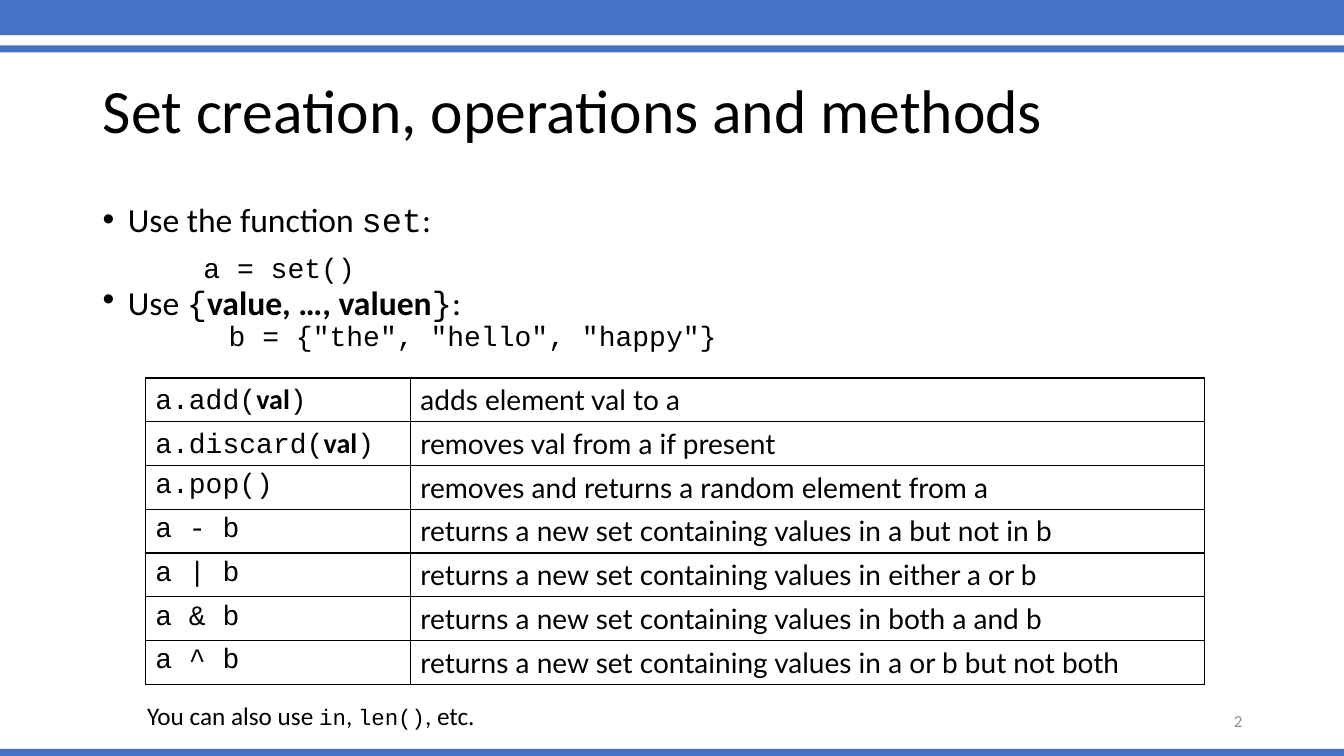
from lxml.etree import SubElement
from pptx import Presentation
from pptx.dml.color import RGBColor
from pptx.enum.shapes import MSO_SHAPE
from pptx.enum.text import MSO_ANCHOR, PP_ALIGN
from pptx.oxml.ns import qn
from pptx.util import Pt

PX = 9144  # 100 px to the inch
COLORS = {"blue": "4472C4", "black": "000000", "gray": "8C8C8C"}
SANS, MONO, LATO = "Calibri", "Courier New", "Lato"


def write(par, text, font=SANS, size=20, bold=False, color="black"):
    run = par.add_run()
    run.text = text
    run.font.name = font
    run.font.size = Pt(size)
    run.font.bold = bold
    run.font.color.rgb = RGBColor.from_string(COLORS[color])


def add_box(left, top, width, height, wrap=True):
    box = slide.shapes.add_textbox(left * PX, top * PX, width * PX, height * PX)
    box.text_frame.word_wrap = wrap
    return box.text_frame


deck = Presentation()
deck.slide_width, deck.slide_height = 1333 * PX, 750 * PX
slide = deck.slides.add_slide(deck.slide_layouts[5])

# Bands across the top and bottom
for top, height in [(-3, 38), (45, 7), (743, 7)]:
    band = slide.shapes.add_shape(MSO_SHAPE.RECTANGLE, 0, top * PX, 1333 * PX, height * PX)
    band.shadow.inherit = False
    band.fill.solid()
    band.fill.fore_color.rgb = RGBColor.from_string(COLORS["blue"])
    band.line.fill.background()

# Title
title = slide.shapes.title
title.left, title.top, title.width, title.height = 92 * PX, 40 * PX, 1150 * PX, 145 * PX
title.text_frame.vertical_anchor = MSO_ANCHOR.MIDDLE
par = title.text_frame.paragraphs[0]
par.alignment = PP_ALIGN.LEFT
par.line_spacing = 0.9
write(par, "Set creation, operations and methods", size=44)

# Ways to create a set: bullet, margin, line spacing, space before, runs
big, code = {"size": 24}, {"font": MONO}
ways = [
    (True, 25, 0.8, 10, [("Use the function ", big), ("set", code | big), (":", big)]),
    (False, 100, 0.8, 13, [("a = set()", code)]),
    (True, 25, 0.5, 11, [("Use ", big), ("{", code | big),
                         ("value, …, valuen", big | {"bold": True}),
                         ("}", code | big), (":", big)]),
    (False, 125, 0.5, 10, [('b = {"the", "hello", "happy"}', code)]),
]
body = add_box(92, 200, 1150, 170)
for i, (bullet, margin, spacing, before, runs) in enumerate(ways):
    par = body.add_paragraph() if i else body.paragraphs[0]
    par.line_spacing = spacing
    par.space_before = Pt(before)
    props = par._p.get_or_add_pPr()
    props.set("marL", str(margin * PX))
    if bullet:
        props.set("indent", str(-25 * PX))
        SubElement(props, qn("a:buFont"), typeface="Arial")
        SubElement(props, qn("a:buChar"), char="•")
    for text, style in runs:
        write(par, text, **style)

# Methods and operators
rows = [
    ("a.add(val)", "adds element val to a"),
    ("a.discard(val)", "removes val from a if present"),
    ("a.pop()", "removes and returns a random element from a"),
    ("a - b", "returns a new set containing values in a but not in b"),
    ("a | b", "returns a new set containing values in either a or b"),
    ("a & b", "returns a new set containing values in both a and b"),
    ("a ^ b", "returns a new set containing values in a or b but not both"),
]
grid = slide.shapes.add_table(len(rows), 2, 144 * PX, 375 * PX, 1051 * PX, 303 * PX).table
grid.first_row = grid.horz_banding = False
for col, width in zip(grid.columns, (263, 788)):
    col.width = width * PX
for r, (call, note) in enumerate(rows):
    left, right = grid.cell(r, 0), grid.cell(r, 1)
    par = left.text_frame.paragraphs[0]
    head, val, tail = call.partition("val")
    write(par, head, font=MONO)
    if val:
        write(par, val, bold=True)
        write(par, tail, font=MONO)
    write(right.text_frame.paragraphs[0], note, font=LATO)
    for cell in (left, right):
        props = cell._tc.get_or_add_tcPr()
        for side in ("lnL", "lnR", "lnT", "lnB"):
            line = SubElement(props, qn(f"a:{side}"), w=str(Pt(1)))
            fill = SubElement(line, qn("a:solidFill"))
            SubElement(fill, qn("a:srgbClr"), val=COLORS["black"])
        cell.fill.background()

# Closing note and page number
par = add_box(136, 690, 349, 40, wrap=False).paragraphs[0]
for text, font, size in [("You can also use ", SANS, 18), ("in", MONO, 16), (", ", SANS, 18),
                         ("len()", MONO, 16), (", etc.", SANS, 18)]:
    write(par, text, font=font, size=size)

page = add_box(942, 695, 300, 40)
page.vertical_anchor = MSO_ANCHOR.MIDDLE
page.paragraphs[0].alignment = PP_ALIGN.RIGHT
write(page.paragraphs[0], "2", size=12, color="gray")

deck.save("out.pptx")
